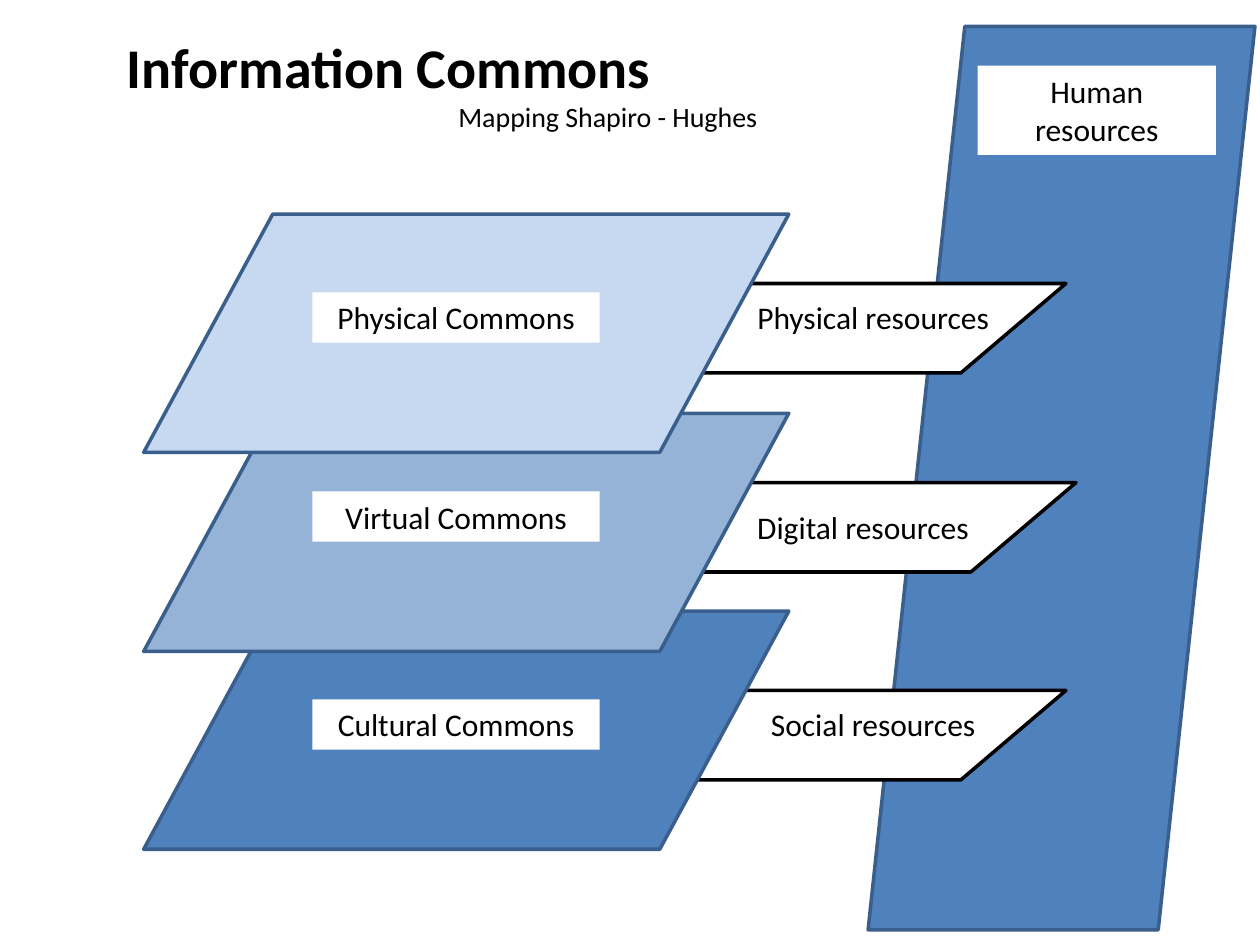
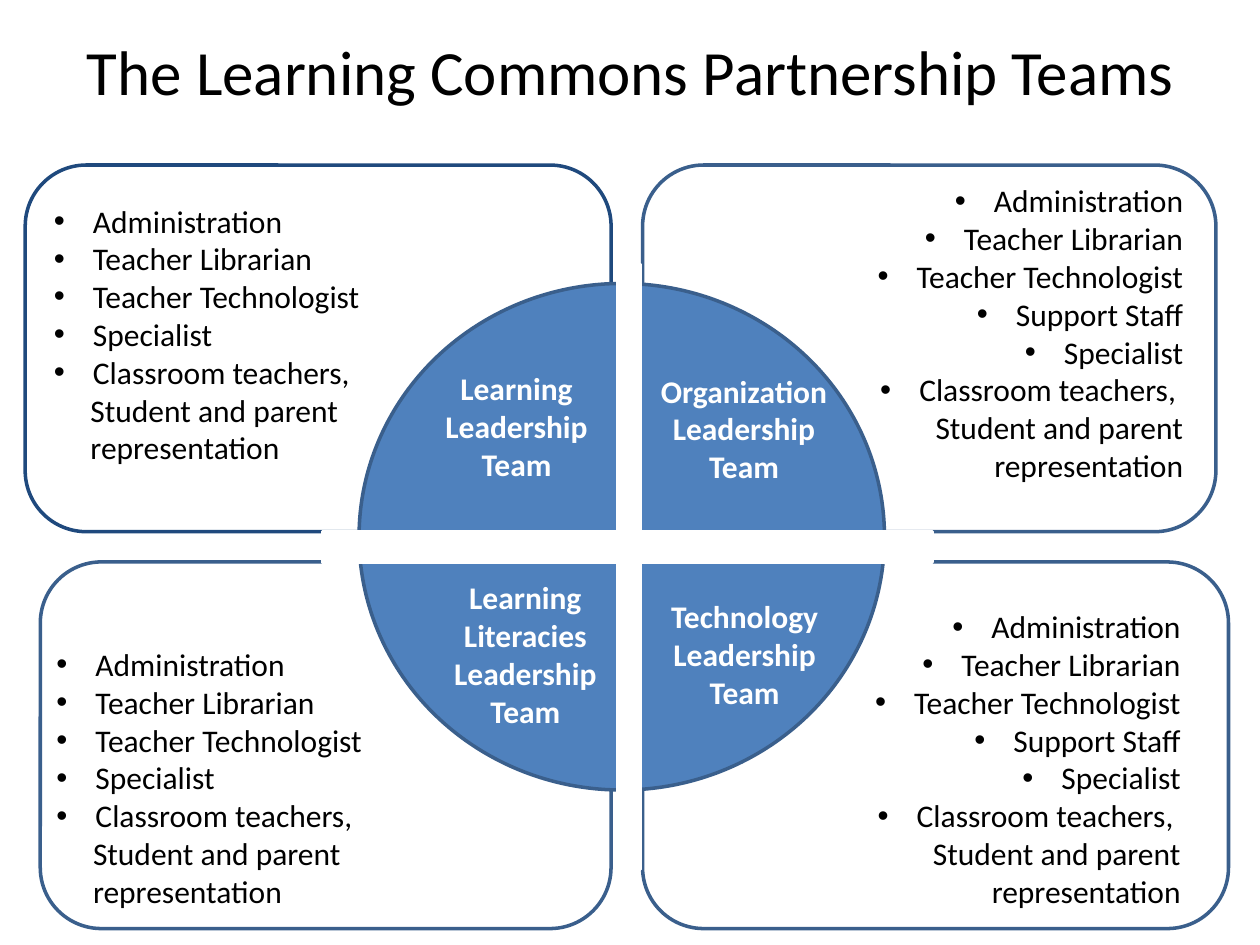
from dataclasses import dataclass

from lxml import etree
from pptx import Presentation
from pptx import util as u
from pptx.dml.color import RGBColor
from pptx.enum import shapes, text
from pptx.oxml.ns import qn

COLORS = {
    "black": "000000",
    "white": "FFFFFF",
    "blue": "4F81BD",
    "mid": "95B3D7",
    "pale": "C6D9F1",
    "edge": "3A5F8C",
    "navy": "1F497D",
}
FONT = "Calibri"
LINE_WIDTH = u.Pt(2)
HANG = u.Inches(0.31)
CONTINUED = u.Inches(0.29)
MSO = shapes.MSO_SHAPE
LEFT, CENTER, RIGHT = (text.PP_ALIGN.LEFT, text.PP_ALIGN.CENTER,
                       text.PP_ALIGN.RIGHT)


@dataclass(frozen=True)
class Box:
    left: float
    top: float
    width: float
    height: float

    def emu(self) -> list[int]:
        return [u.Inches(v) for v in (self.left, self.top, self.width, self.height)]


@dataclass(frozen=True)
class Layer:
    """A commons plane with its label and the resource it reaches."""
    name: str
    color: str
    top: float
    name_top: float
    resource: str
    arm: Box
    resource_left: float
    resource_top: float


@dataclass(frozen=True)
class Team:
    """A quarter of the partnership diagram."""
    name: list[str]
    name_box: Box
    panel: Box
    edge: str
    member_box: Box
    on_right: bool


LAYERS = [
    Layer("Physical Commons", "pale", 1.7, 2.32, "Physical resources",
          Box(4.29, 2.25, 4.17, 0.71), 5.79, 2.32),
    Layer("Virtual Commons", "mid", 3.28, 3.9, "Digital resources",
          Box(4.37, 3.83, 4.17, 0.71), 5.71, 3.98),
    Layer("Cultural Commons", "blue", 4.85, 5.55, "Social resources",
          Box(4.29, 5.48, 4.17, 0.71), 5.79, 5.55),
]

TEAMS = [
    Team(["Learning", "Leadership", "Team"], Box(3.43, 2.88, 1.34, 1.01),
         Box(0.2, 1.31, 4.65, 2.91), "navy", Box(0.33, 1.55, 2.66, 2.22), False),
    Team(["Organization", "Leadership", "Team"], Box(5.14, 2.9, 1.53, 1.01),
         Box(5.1, 1.31, 4.55, 2.91), "edge", Box(6.83, 1.39, 2.66, 2.52), True),
    Team(["Learning", "Literacies", "Leadership", "Team"], Box(3.5, 4.54, 1.34, 1.31),
         Box(0.32, 4.46, 4.53, 2.91), "edge", Box(0.35, 5.07, 2.66, 2.22), False),
    Team(["Technology", "Leadership", "Team"], Box(5.22, 4.69, 1.38, 1.01),
         Box(5.1, 4.46, 4.65, 2.91), "edge", Box(6.81, 4.77, 2.66, 2.52), True),
]


def rgb(name: str) -> RGBColor:
    return RGBColor.from_string(COLORS[name])


def add_figure(slide, kind, box: Box, fill: str, line: str | None = None):
    sp = slide.shapes.add_shape(kind, *box.emu())
    sp.shadow.inherit = False
    sp.fill.solid()
    sp.fill.fore_color.rgb = rgb(fill)
    if line:
        sp.line.color.rgb = rgb(line)
        sp.line.width = LINE_WIDTH
    else:
        sp.line.fill.background()
    return sp


def add_line(p, line: str, size: float = 18, bold: bool = False,
             color: str = "black", align=LEFT) -> None:
    p.alignment = align
    r = p.add_run()
    r.text = line
    for key, value in {"name": FONT, "size": u.Pt(size), "bold": bold}.items():
        setattr(r.font, key, value)
    r.font.color.rgb = rgb(color)


def add_text(slide, box: Box, lines: list[str], fill: str | None = None,
             wrap: bool = True, **style):
    sp = slide.shapes.add_textbox(*box.emu())
    if fill:
        sp.fill.solid()
        sp.fill.fore_color.rgb = rgb(fill)
    tf = sp.text_frame
    tf.word_wrap = wrap
    tf.auto_size = text.MSO_AUTO_SIZE.SHAPE_TO_FIT_TEXT
    for i, line in enumerate(lines):
        p = tf.add_paragraph() if i else tf.paragraphs[0]
        add_line(p, line, **style)
    return tf


def indent(p, margin: int, first: int = 0, bullet: str = "") -> None:
    ppr = p._p.get_or_add_pPr()
    ppr.set("marL", str(margin))
    ppr.set("indent", str(first))
    if bullet:
        etree.SubElement(ppr, qn("a:buFont")).set("typeface", "Arial")
        etree.SubElement(ppr, qn("a:buChar")).set("char", bullet)


def add_members(slide, team: Team) -> None:
    roles = ["Administration", "Teacher Librarian", "Teacher Technologist"]
    if team.on_right:
        roles += ["Support Staff", "Specialist", "Classroom teachers, "]
    else:
        roles += ["Specialist", "Classroom teachers,"]
    tf = add_text(slide, team.member_box,
                  roles + ["Student and parent", "representation"],
                  wrap=False, align=RIGHT if team.on_right else LEFT)
    for i, p in enumerate(tf.paragraphs):
        if i < len(roles):
            indent(p, HANG, -HANG, "•")
        else:
            indent(p, CONTINUED)


def build_information_commons(slide) -> None:
    # Human resources bar, then arms and planes from the bottom up
    add_figure(slide, MSO.PARALLELOGRAM, Box(6.89, 0.21, 3.07, 7.17), "blue", "edge")
    for layer in reversed(LAYERS):
        add_figure(slide, MSO.FLOWCHART_DATA, layer.arm, "white", "black")
    for layer in reversed(LAYERS):
        add_figure(slide, MSO.FLOWCHART_DATA, Box(1.14, layer.top, 5.12, 1.89),
                   layer.color, "edge")

    # Labels
    for layer in LAYERS:
        add_text(slide, Box(2.48, layer.name_top, 2.28, 0.4), [layer.name],
                 fill="white", align=CENTER)
        add_text(slide, Box(layer.resource_left, layer.resource_top, 2.28, 0.4),
                 [layer.resource], align=CENTER)
    add_text(slide, Box(7.76, 0.52, 1.89, 0.71), ["Human", "resources"],
             fill="white", align=CENTER)

    # Title and subtitle
    tf = add_text(slide, Box(0.91, 0.21, 5.2, 0.91), ["Information Commons"],
                  size=32, bold=True)
    add_line(tf.add_paragraph(), "Mapping Shapiro - Hughes", size=16, align=RIGHT)


def build_partnership_teams(slide) -> None:
    # Panels and the circle, parted by a white cross
    for team in TEAMS:
        add_figure(slide, MSO.ROUNDED_RECTANGLE, team.panel, "white", team.edge)
    add_figure(slide, MSO.OVAL, Box(2.85, 2.25, 4.17, 4.02), "blue", "edge")
    for bar in (Box(4.9, 2.1, 0.18, 4.8), Box(2.56, 4.22, 4.84, 0.24)):
        add_figure(slide, MSO.RECTANGLE, bar, "white", "white")

    # Team names and members
    for team in TEAMS:
        add_text(slide, team.name_box, team.name, wrap=False, bold=True,
                 color="white", align=CENTER)
        add_members(slide, team)

    # Title
    add_text(slide, Box(0.59, 0.21, 9.29, 0.71),
             ["The Learning Commons Partnership Teams"], size=36)


def main() -> None:
    prs = Presentation()
    prs.slide_width, prs.slide_height = u.Inches(10), u.Inches(7.5)
    for build in (build_information_commons, build_partnership_teams):
        build(prs.slides.add_slide(prs.slide_layouts[6]))
    prs.save("out.pptx")


if __name__ == "__main__":
    main()
